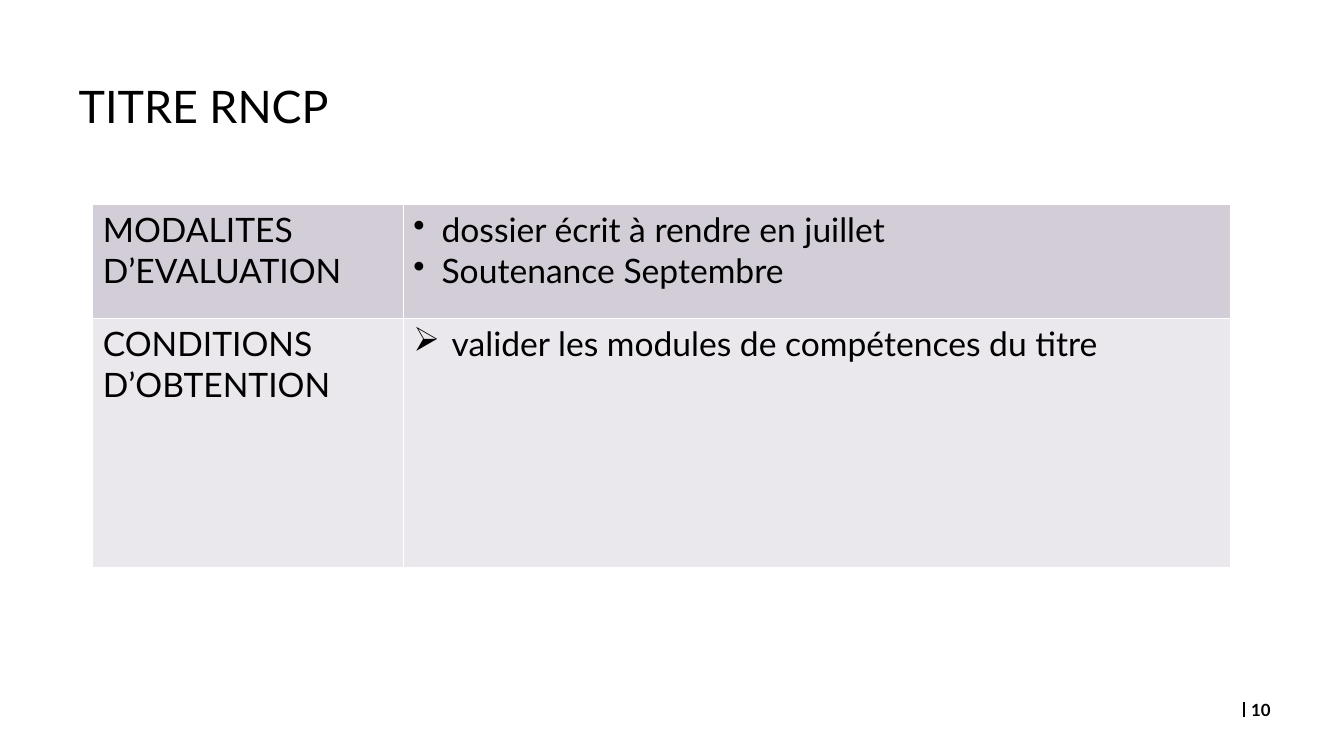
from lxml import etree
from pptx import Presentation
from pptx.dml.color import RGBColor
from pptx.enum.shapes import MSO_CONNECTOR
from pptx.enum.text import MSO_ANCHOR, MSO_AUTO_SIZE, PP_ALIGN
from pptx.oxml.ns import qn
from pptx.util import Inches, Pt

STRAIGHT = MSO_CONNECTOR.STRAIGHT
TOP, MIDDLE = MSO_ANCHOR.TOP, MSO_ANCHOR.MIDDLE
LEFT = PP_ALIGN.LEFT
NO_FIT = MSO_AUTO_SIZE.NONE
TITLE_ONLY = 5

BLACK, WHITE = "000000", "FFFFFF"
COLUMN_SHARES = (23.11, 61.59)
# Each row: height share, fill, label, bullet sign, bullet indent in inches, items
ROWS = (
    (15.07, "D2CDD7", "MODALITES D’EVALUATION", "•", 0.28,
     ("dossier écrit à rendre en juillet", "Soutenance Septembre")),
    (32.93, "EAE8EC", "CONDITIONS D’OBTENTION", "➢", 0.38,
     ("valider les modules de compétences du titre",)),
)


def color(value):
    return RGBColor.from_string(value)


def assign(target, values):
    for name, value in values.items():
        setattr(target, name, value)


class Page:
    """Draws on one slide; places and sizes are percentages of the slide."""

    font_name = "Lato"

    def __init__(self, deck):
        self.deck = deck
        self.slide = deck.slides.add_slide(deck.slide_layouts[TITLE_ONLY])
        self.shapes = self.slide.shapes

    def across(self, share):
        return round(self.deck.slide_width * share / 100)

    def down(self, share):
        return round(self.deck.slide_height * share / 100)

    def area(self, left, top, width, height):
        return (self.across(left), self.down(top),
                self.across(width), self.down(height))

    def add_words(self, para, text, size, bold=False):
        para.alignment = LEFT
        span = para.add_run()
        span.text = text
        assign(span.font, {"name": self.font_name, "size": Pt(size), "bold": bold})
        span.font.color.rgb = color(BLACK)

    def frame(self, box, anchor, insets):
        left, top, right, bottom = map(Inches, insets)
        assign(box.text_frame, {
            "word_wrap": True, "auto_size": NO_FIT, "vertical_anchor": anchor,
            "margin_left": left, "margin_top": top,
            "margin_right": right, "margin_bottom": bottom})
        return box.text_frame.paragraphs[0]

    def title(self, text, area):
        box = self.shapes.title
        assign(box, dict(zip(("left", "top", "width", "height"), self.area(*area))))
        self.add_words(self.frame(box, TOP, (0, 0.05, 0.1, 0.05)), text, 32)

    def text(self, text, area, size, bold):
        box = self.shapes.add_textbox(*self.area(*area))
        self.add_words(self.frame(box, MIDDLE, (0, 0, 0, 0)), text, size, bold)

    def line(self, start, end, width):
        rule = self.shapes.add_connector(
            STRAIGHT, self.across(start[0]), self.down(start[1]),
            self.across(end[0]), self.down(end[1]))
        rule.line.width = Pt(width)
        rule.line.color.rgb = color(BLACK)
        etree.SubElement(rule._element.spPr, qn("a:effectLst"))

    def bullet(self, para, sign, indent):
        properties = para._p.get_or_add_pPr()
        properties.set("marL", str(Inches(indent)))
        properties.set("indent", str(-Inches(indent)))
        etree.SubElement(properties, qn("a:buChar"), char=sign)

    def borders(self, cell):
        """Put white lines on all sides, ahead of the fill as the schema asks."""
        properties = cell._tc.get_or_add_tcPr()
        for position, side in enumerate(("lnL", "lnR", "lnT", "lnB")):
            edge = etree.Element(qn(f"a:{side}"), w=str(Pt(1)))
            fill = etree.SubElement(edge, qn("a:solidFill"))
            etree.SubElement(fill, qn("a:srgbClr"), val=WHITE)
            properties.insert(position, edge)

    def cell(self, cell, fill, items, sign=None, indent=0):
        cell.fill.solid()
        cell.fill.fore_color.rgb = color(fill)
        self.borders(cell)
        for position, item in enumerate(items):
            frame = cell.text_frame
            para = frame.add_paragraph() if position else frame.paragraphs[0]
            if sign:
                self.bullet(para, sign, indent)
            self.add_words(para, item, 24)

    def table(self, left, top, column_shares, rows):
        area = self.area(left, top, sum(column_shares), sum(row[0] for row in rows))
        table = self.shapes.add_table(len(rows), len(column_shares), *area).table
        assign(table, {"first_row": False, "horz_banding": False})
        for column, share in zip(table.columns, column_shares):
            column.width = self.across(share)
        for index, (height, fill, label, sign, indent, items) in enumerate(rows):
            table.rows[index].height = self.down(height)
            self.cell(table.cell(index, 0), fill, [label])
            self.cell(table.cell(index, 1), fill, items, sign, indent)


def main():
    deck = Presentation()
    deck.slide_width, deck.slide_height = Inches(13.33), Inches(7.5)
    page = Page(deck)
    page.line((92.57, 92.8), (92.57, 94.8), 1.5)
    page.text("10", (93.1, 92.8, 2.7, 2.13), 12, True)
    page.title("TITRE RNCP", (5.85, 9.73, 44.19, 12.53))
    page.table(6.9, 27.07, COLUMN_SHARES, ROWS)
    deck.save("out.pptx")


if __name__ == "__main__":
    main()
